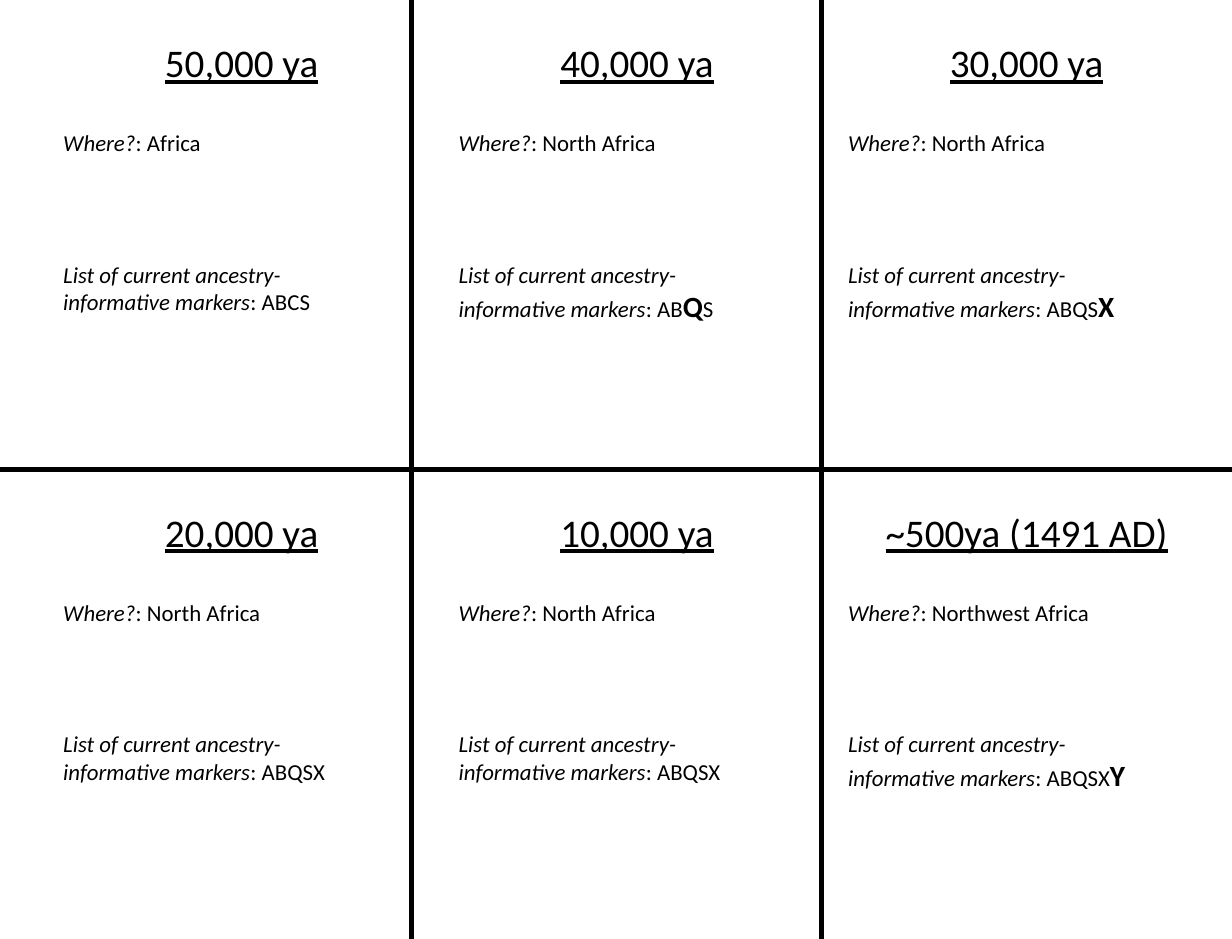
import pptx
import pptx.util
import pptx.dml.color
import pptx.enum.shapes
import pptx.enum.text
import lxml.etree

Pt = pptx.util.Pt
WIDTH, HEIGHT = 756, 576
ROW_HEIGHT = HEIGHT / 2
COLUMN_LEFTS = [31.68, 274.32, 513.36]
BLACK = "000000"


def color(hex_string):
    return pptx.dml.color.RGBColor.from_string(hex_string)


def add_line(left, top, width, height, size):
    box = slide.shapes.add_textbox(Pt(left), Pt(top), Pt(width), Pt(height))
    box.text_frame.word_wrap = True
    box.text_frame.auto_size = pptx.enum.text.MSO_AUTO_SIZE.SHAPE_TO_FIT_TEXT
    line = box.text_frame.paragraphs[0]
    line.font.name = "Calibri"
    line.font.size = Pt(size)
    line.font.color.rgb = color(BLACK)
    return line


deck = pptx.Presentation()
deck.slide_width, deck.slide_height = Pt(WIDTH), Pt(HEIGHT)
slide = deck.slides.add_slide(deck.slide_layouts[6])

dividers = [
    (0, ROW_HEIGHT, WIDTH, ROW_HEIGHT),
    (252.5, 0, 252.5, HEIGHT),
    (504, 0, 504, HEIGHT),
]
for ends in dividers:
    divider = slide.shapes.add_connector(
        pptx.enum.shapes.MSO_CONNECTOR.STRAIGHT, *[Pt(end) for end in ends])
    divider.line.color.rgb = color(BLACK)
    divider.line.width = Pt(3)
    lxml.etree.SubElement(divider._element.spPr, pptx.oxml.ns.qn("a:effectLst"))

# Each period: date, place, markers before the new one, new marker, markers after
periods = [
    ("50,000 ya", "Africa", "ABCS", "", ""),
    ("40,000 ya", "North Africa", "AB", "Q", "S"),
    ("30,000 ya", "North Africa", "ABQS", "X", ""),
    ("20,000 ya", "North Africa", "ABQSX", "", ""),
    ("10,000 ya", "North Africa", "ABQSX", "", ""),
    ("~500ya (1491 AD)", "Northwest Africa", "ABQSX", "Y", ""),
]
for index, (date, place, markers, new_marker, later_markers) in enumerate(periods):
    row, column = divmod(index, len(COLUMN_LEFTS))
    left, top = COLUMN_LEFTS[column], row * ROW_HEIGHT

    heading = add_line(left, top + 20.16, 233.28, 36, 24)
    heading.alignment = pptx.enum.text.PP_ALIGN.CENTER
    heading.font.underline = True
    heading.add_run().text = date

    where = add_line(left, top + 75.6, 205.2, 24.5, 14)
    marker_list = add_line(left, top + 156.24, 205.2, 46 if new_marker else 41, 14)
    for line, label, answer in [
        (where, "Where?", place),
        (marker_list, "List of current ancestry-informative markers", markers),
    ]:
        label_run = line.add_run()
        label_run.text = label
        label_run.font.italic = True
        line.add_run().text = f": {answer}"

    if new_marker:
        new_run = marker_list.add_run()
        new_run.text = new_marker
        new_run.font.bold = True
        new_run.font.size = Pt(18)
    if later_markers:
        marker_list.add_run().text = later_markers

deck.save("out.pptx")
